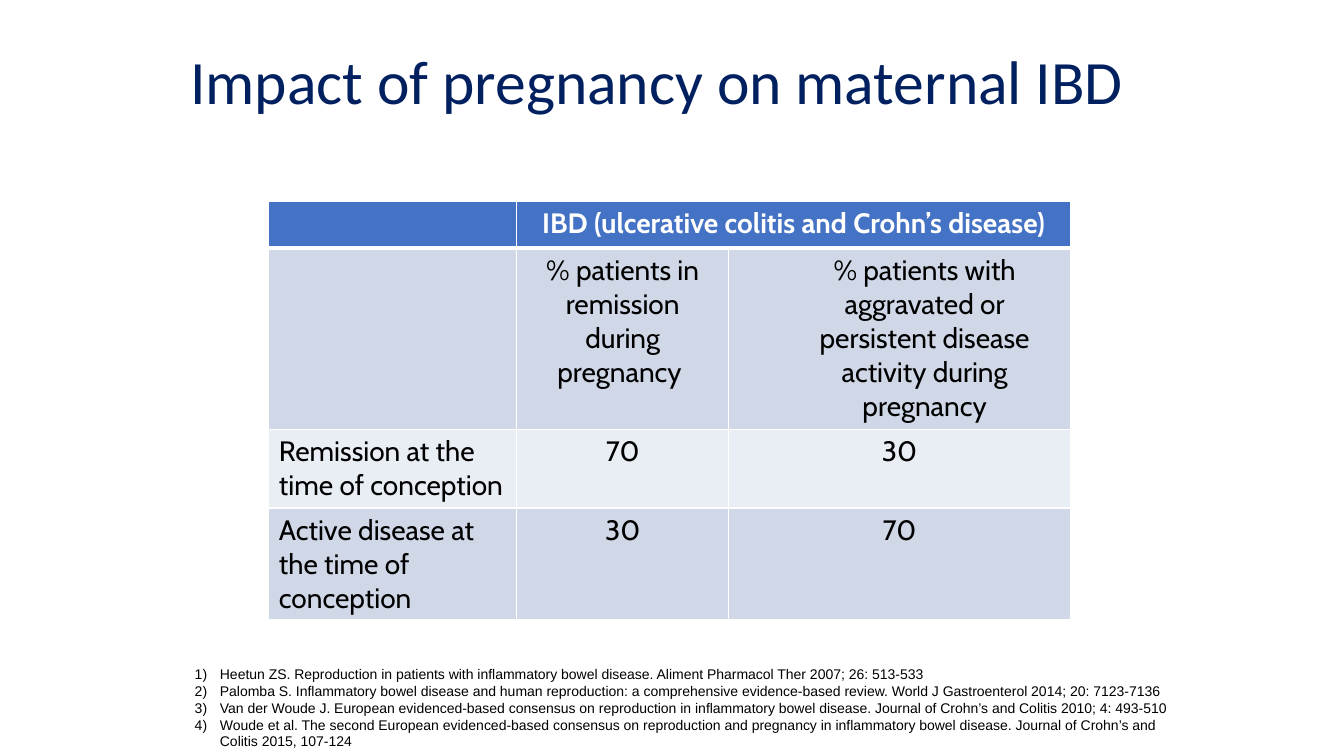
from lxml.etree import SubElement
from pptx import Presentation
from pptx.dml.color import RGBColor
from pptx.enum.text import MSO_ANCHOR, PP_ALIGN
from pptx.oxml.ns import qn
from pptx.util import Inches, Pt

W, H = 13.33, 7.5
COLORS = {
    "title": "002060", "text": "000000", "white": "FFFFFF",
    "header": "4472C4", "dark_band": "D0D8E8", "light_band": "E9EDF4",
}
COL_WIDTHS = [2.46, 2.1, 3.39]
ROW_HEIGHTS = [0.46, 1.8, 0.78, 1.11]
ROW_FILLS = ["header", "dark_band", "light_band", "dark_band"]
ROWS = [
    ["", "IBD (ulcerative colitis and Crohn’s disease)", ""],
    ["", "% patients in remission during pregnancy ",
     "% patients with aggravated or persistent disease activity during pregnancy"],
    ["Remission at the time of conception", "70", "30"],
    ["Active disease at the time of conception", "30", "70"],
]
REFERENCES = [
    "Heetun ZS. Reproduction in patients with inflammatory bowel disease. "
    "Aliment Pharmacol Ther 2007; 26: 513-533",
    "Palomba S. Inflammatory bowel disease and human reproduction: a comprehensive "
    "evidence-based review. World J Gastroenterol 2014; 20: 7123-7136",
    "Van der Woude J. European evidenced-based consensus on reproduction in "
    "inflammatory bowel disease. Journal of Crohn’s and Colitis 2010; 4: 493-510",
    "Woude et al. The second European evidenced-based consensus on reproduction and "
    "pregnancy in inflammatory bowel disease. Journal of Crohn’s and Colitis 2015, 107-124",
]


def rgb(name):
    return RGBColor.from_string(COLORS[name])


def add_run(p, text, font, size, color, bold=False):
    r = p.add_run()
    r.text = text
    r.font.name, r.font.size, r.font.bold = font, Pt(size), bold
    r.font.color.rgb = rgb(color)


def add_text_frame(s, left, top, width, height):
    """Add a wrapping top-anchored text box; lengths are percentages of the slide."""
    box = s.shapes.add_textbox(Inches(left * W / 100), Inches(top * H / 100),
                               Inches(width * W / 100), Inches(height * H / 100))
    tf = box.text_frame
    tf.word_wrap = True
    tf.vertical_anchor = MSO_ANCHOR.TOP
    return tf


def add_title(s, text):
    tf = add_text_frame(s, 12.05, 6.1, 73.7, 20)
    p = tf.paragraphs[0]
    p.alignment, p.line_spacing = PP_ALIGN.CENTER, 0.9
    add_run(p, text, "Calibri", 44, "title")


def set_borders(cell, row):
    """White grid, with a thick line under the header row."""
    tcPr = cell._tc.get_or_add_tcPr()
    widths = {"lnL": 1, "lnR": 1, "lnT": 3 if row == 1 else 1, "lnB": 3 if row == 0 else 1}
    for tag, width in widths.items():
        ln = SubElement(tcPr, qn(f"a:{tag}"), w=str(Pt(width)))
        fill = SubElement(ln, qn("a:solidFill"))
        SubElement(fill, qn("a:srgbClr"), val=COLORS["white"])


def fill_cell(cell, row, col, text):
    set_borders(cell, row)
    cell.fill.solid()
    cell.fill.fore_color.rgb = rgb(ROW_FILLS[row])
    if not text:
        return
    p = cell.text_frame.paragraphs[0]
    p.alignment = PP_ALIGN.CENTER if col else PP_ALIGN.LEFT
    if (row, col) == (1, 2):
        p.level = 1
        p._p.get_or_add_pPr().set("marL", str(Inches(0.5)))
    is_header = row == 0
    add_run(p, text, "Cabin", 20, "white" if is_header else "text", is_header)


def add_outcome_table(s):
    frame = s.shapes.add_table(len(ROWS), len(COL_WIDTHS), Inches(0.2 * W), Inches(2),
                               Inches(sum(COL_WIDTHS)), Inches(sum(ROW_HEIGHTS)))
    table = frame.table
    table.first_row = table.horz_banding = False
    for column, width in zip(table.columns, COL_WIDTHS):
        column.width = Inches(width)
    for row, height in zip(table.rows, ROW_HEIGHTS):
        row.height = Inches(height)
    table.cell(0, 1).merge(table.cell(0, 2))
    for i, texts in enumerate(ROWS):
        for j, text in enumerate(texts):
            fill_cell(table.cell(i, j), i, j, text)


def add_references(s, references):
    tf = add_text_frame(s, 13.75, 87.4, 74, 12.6)
    for i, reference in enumerate(references):
        p = tf.add_paragraph() if i else tf.paragraphs[0]
        pPr = p._p.get_or_add_pPr()
        pPr.set("marL", str(Inches(0.25)))
        pPr.set("indent", str(Inches(-0.25)))
        color = SubElement(pPr, qn("a:buClr"))
        SubElement(color, qn("a:srgbClr"), val=COLORS["text"])
        SubElement(pPr, qn("a:buFont"), typeface="+mj-lt")
        SubElement(pPr, qn("a:buAutoNum"), type="arabicParenR")
        add_run(p, reference, "Arial", 10, "text")


def main():
    prs = Presentation()
    prs.slide_width, prs.slide_height = Inches(W), Inches(H)
    s = prs.slides.add_slide(prs.slide_layouts[6])
    s.background.fill.solid()
    s.background.fill.fore_color.rgb = rgb("white")

    # Heading, results and sources
    add_title(s, "Impact of pregnancy on maternal IBD")
    add_outcome_table(s)
    add_references(s, REFERENCES)

    prs.save("out.pptx")


if __name__ == "__main__":
    main()
